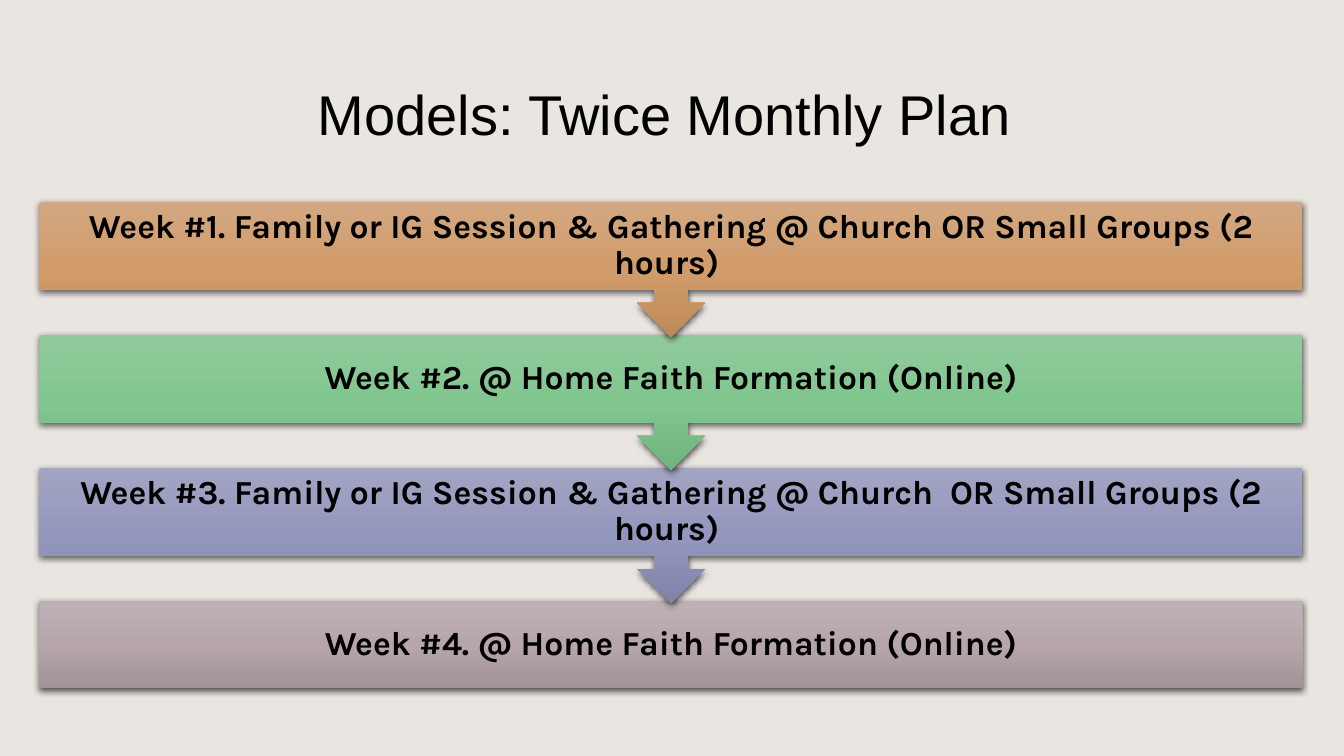
from pptx import Presentation
from pptx.dml.color import RGBColor
from pptx.enum.shapes import MSO_SHAPE as Preset
from pptx.enum.text import MSO_ANCHOR as Anchor, PP_ALIGN as Align
from pptx.oxml import parse_xml
from pptx.oxml.ns import nsdecls
from pptx.util import Inches, Pt

WEEKS = [
    ("Week #1. Family or IG Session & Gathering @ Church OR Small Groups (2 hours) ",
     ("D2A781", "D19C6A", "BF8A59")),
    ("Week #2. @ Home Faith Formation (Online)", ("92CA9D", "80C68E", "6EB47C")),
    ("Week #3. Family or IG Session & Gathering @ Church  OR Small Groups (2 hours) ",
     ("A2A4C3", "9497BD", "8184AA")),
    ("Week #4. @ Home Faith Formation (Online)", ("BEB1B6", "B6A6AC", "A29398")),
]
PITCH, BAR_HEIGHT, CALLOUT_HEIGHT = 1.32, 0.87, 1.34


def color(value):
    return RGBColor.from_string(value)


def write(shape, text, inset, spacing, **font):
    frame = shape.text_frame
    layout = {"word_wrap": True, "vertical_anchor": Anchor.MIDDLE,
              "margin_left": Inches(inset), "margin_right": Inches(inset),
              "margin_top": Inches(0.05), "margin_bottom": Inches(0.05)}
    for name, value in layout.items():
        setattr(frame, name, value)
    para = frame.paragraphs[0]
    para.alignment = Align.CENTER
    para.line_spacing = spacing
    span = para.add_run()
    span.text = text
    for name, value in font.items():
        setattr(span.font, name, value)
    span.font.color.rgb = color("000000")


def paint(shape, stops):
    """Vertical three-stop gradient, no outline, soft shadow below."""
    shape.fill.gradient()
    shape.fill.gradient_angle = 270
    shape.line.fill.background()
    props = shape._element.spPr
    stop_list = props.find(".//{*}gsLst")
    for stop in list(stop_list):
        stop_list.remove(stop)
    for index, value in enumerate(stops):
        stop_list.append(parse_xml(
            f'<a:gs {nsdecls("a")} pos="{index * 50000}"><a:srgbClr val="{value}"/></a:gs>'))
    props.append(parse_xml(
        f'<a:effectLst {nsdecls("a")}>'
        f'<a:outerShdw blurRad="{Pt(4.5)}" dist="{Pt(1.5)}" dir="5400000" rotWithShape="0">'
        '<a:srgbClr val="000000"><a:alpha val="63000"/></a:srgbClr>'
        '</a:outerShdw></a:effectLst>'))


def add_title(page, left, top, width, height):
    box = page.shapes.add_textbox(*map(Inches, (left, top, width, height)))
    write(box, "Models: Twice Monthly Plan ", 0.1, 1.0, name="Arial", size=Pt(40))


def add_weeks(page, left, top, width):
    # Last week first, so each arrow tip lies over the bar below it
    for index, (text, stops) in reversed(list(enumerate(WEEKS))):
        last = index == len(WEEKS) - 1
        preset = Preset.RECTANGLE if last else Preset.DOWN_ARROW_CALLOUT
        height = BAR_HEIGHT if last else CALLOUT_HEIGHT
        bar = page.shapes.add_shape(
            preset, *map(Inches, (left, top + index * PITCH, width, height)))
        paint(bar, stops)
        write(bar, text, 0.19, 0.9, name="Karla", size=Pt(24), bold=True)


def main():
    deck = Presentation()
    deck.slide_width, deck.slide_height = Inches(13.33), Inches(7.5)
    page = deck.slides.add_slide(deck.slide_layouts[6])
    page.background.fill.solid()
    page.background.fill.fore_color.rgb = color("E9E5E1")
    add_title(page, 0, 0.4, 13.33, 1.45)
    add_weeks(page, 0.39, 2, 12.53)
    deck.save("out.pptx")


if __name__ == "__main__":
    main()
